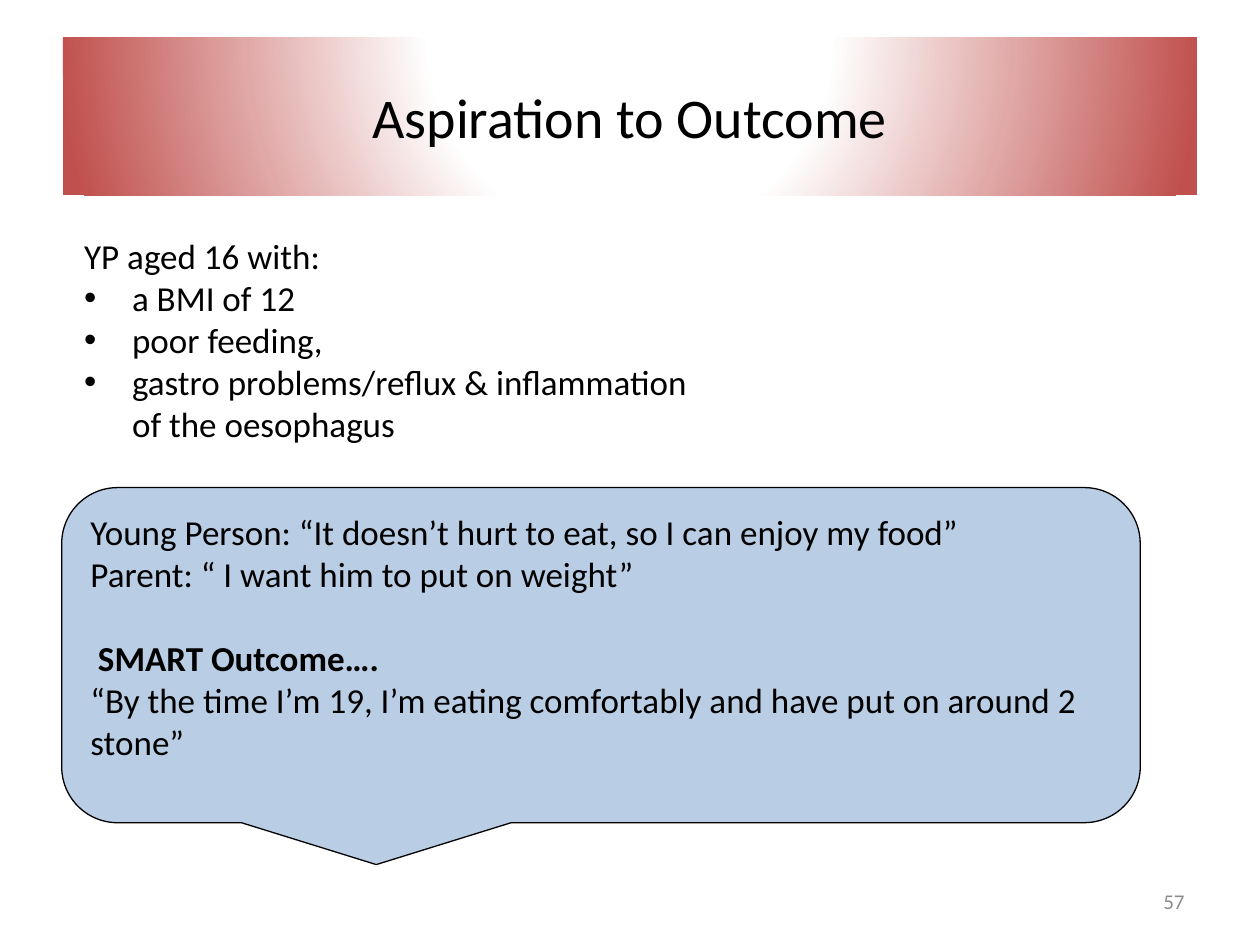
from typing import NamedTuple

from lxml import etree
from pptx import Presentation
from pptx import util as u
from pptx.dml.color import RGBColor
from pptx.enum import shapes, text
from pptx.oxml import parse_xml
from pptx.oxml.ns import nsdecls, qn

COLS, ROWS = 100, 75
CELL = u.Inches(0.1)
INDENT = u.Inches(0.38)
FONT = "Calibri"


class Area(NamedTuple):
    """Left, top, width and height in grid cells."""
    col: float
    row: float
    wide: float
    high: float

    def box(self) -> list[int]:
        return [round(n * CELL) for n in self]


class Line(NamedTuple):
    words: str
    bold: bool = False
    bullet: bool = False
    left: int = 0
    first: int = 0
    gap: float = 0


def paint(color: str) -> RGBColor:
    return RGBColor.from_string(color)


def write(shape, lines: list[Line], size=20, color="000000",
          align=text.PP_ALIGN.LEFT, anchor=text.MSO_ANCHOR.TOP) -> None:
    frame = shape.text_frame
    frame.word_wrap = True
    frame.vertical_anchor = anchor
    for i, line in enumerate(lines):
        para = frame.add_paragraph() if i else frame.paragraphs[0]
        para.alignment = align
        para.space_before = u.Pt(line.gap)
        props = para._p.get_or_add_pPr()
        props.set("marL", str(line.left))
        props.set("indent", str(line.first))
        if line.bullet:
            etree.SubElement(props, qn("a:buFont"), typeface="Arial")
            etree.SubElement(props, qn("a:buChar"), char="•")
        run = para.add_run()
        run.text = line.words
        font = run.font
        font.name, font.size, font.bold = FONT, u.Pt(size), line.bold
        font.color.rgb = paint(color)


def glow(shape, stops: list[tuple[int, str]]) -> None:
    """Fill with a circular gradient centred above and below the shape."""
    marks = "".join(f'<a:gs pos="{pos * 1000}"><a:srgbClr val="{color}"/></a:gs>'
                    for pos, color in stops)
    shape.fill.background()
    props = shape._element.spPr
    props.replace(props.find(qn("a:noFill")), parse_xml(
        f'<a:gradFill {nsdecls("a")} rotWithShape="1"><a:gsLst>{marks}</a:gsLst>'
        '<a:path path="circle"><a:fillToRect l="50000" t="-80000" r="50000" b="180000"/>'
        '</a:path></a:gradFill>'))


def main() -> None:
    deck = Presentation()
    deck.slide_width, deck.slide_height = COLS * CELL, ROWS * CELL
    page = deck.slides.add_slide(deck.slide_layouts[6]).shapes
    kind = shapes.MSO_SHAPE

    title = page.add_shape(kind.RECTANGLE, *Area(5, 3, 90, 12.5).box())
    title.shadow.inherit = False
    title.line.fill.background()
    glow(title, [(0, "FFFFFF"), (35, "FFFFFF"), (100, "C0504D")])
    write(title, [Line("Aspiration to Outcome")], size=32,
          align=text.PP_ALIGN.CENTER, anchor=text.MSO_ANCHOR.MIDDLE)

    quote = page.add_shape(kind.ROUNDED_RECTANGULAR_CALLOUT,
                           *Area(4.9, 38.7, 85.6, 26.6).box())
    quote.shadow.inherit = False
    quote.fill.solid()
    quote.fill.fore_color.rgb = paint("B9CDE5")
    quote.line.color.rgb = paint("000000")
    quote.line.width = u.Pt(0.75)
    write(quote, [
        Line("Young Person: “It doesn’t hurt to eat, so I can enjoy my food”"),
        Line("Parent: “ I want him to put on weight”"),
        Line("SMART Outcome….", bold=True, first=u.Inches(0.06), gap=24),
        Line("“By the time I’m 19, I’m eating comfortably and have put on around 2 stone”"),
    ])

    needs = page.add_textbox(*Area(5.7, 18.1, 51, 17.8).box())
    points = ["a BMI of 12", "poor feeding,", "gastro problems/reflux & inflammation"]
    write(needs, [
        Line("YP aged 16 with:"),
        *(Line(point, bullet=True, left=INDENT, first=-INDENT) for point in points),
        Line("of the oesophagus", left=INDENT),
    ])

    number = page.add_textbox(*Area(71.7, 69.5, 23.3, 4).box())
    write(number, [Line("57")], size=12, color="8C8C8C",
          align=text.PP_ALIGN.RIGHT, anchor=text.MSO_ANCHOR.MIDDLE)

    deck.save("out.pptx")


if __name__ == "__main__":
    main()
